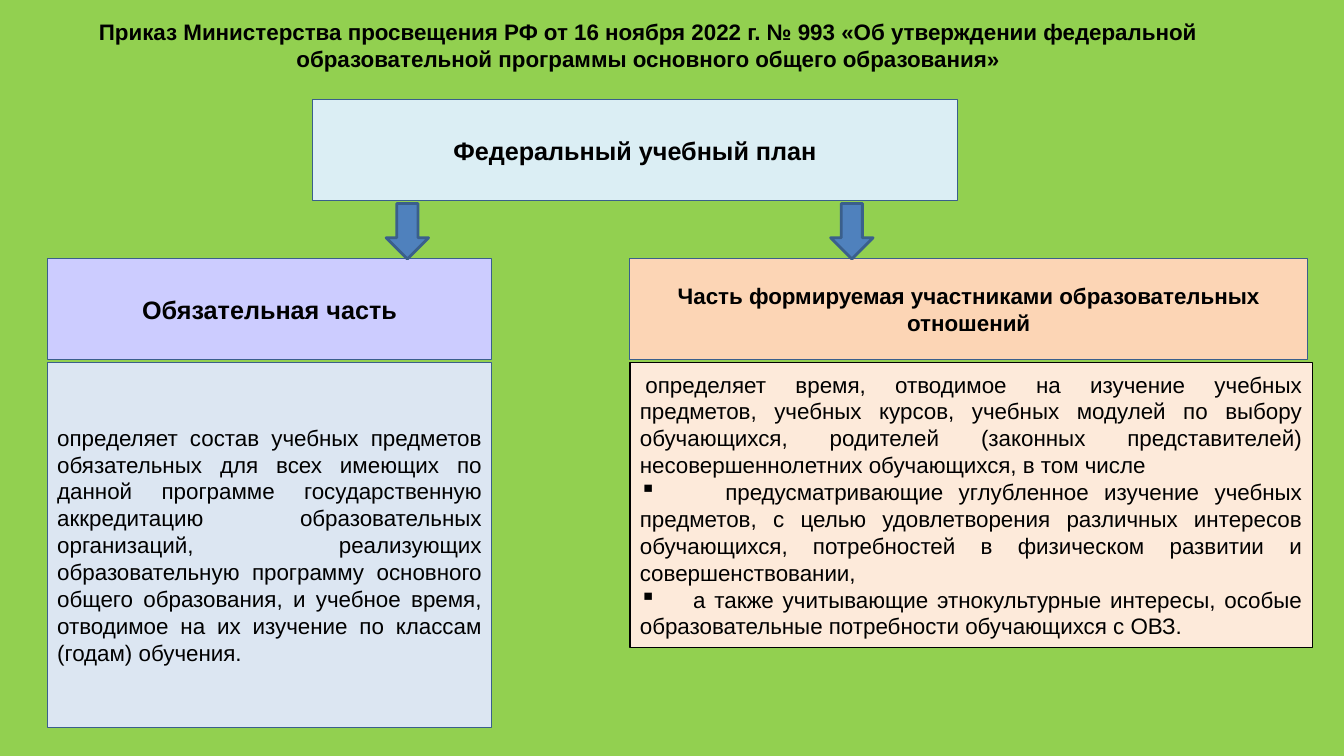
from lxml.etree import SubElement
from pptx import Presentation
from pptx.dml.color import RGBColor
from pptx.enum.shapes import MSO_SHAPE
from pptx.enum.text import MSO_ANCHOR, PP_ALIGN
from pptx.oxml.ns import qn
from pptx.util import Pt

# Content
TITLE = ("Приказ Министерства просвещения РФ от 16 ноября 2022 г. № 993 «Об утверждении "
         "федеральной образовательной программы основного общего образования»")
PLAN = "Федеральный учебный план"
REQUIRED = "Обязательная часть"
REQUIRED_TEXT = (
    "определяет состав учебных предметов обязательных для всех имеющих по данной программе "
    "государственную аккредитацию образовательных организаций, реализующих образовательную "
    "программу основного общего образования, и учебное время, отводимое на их изучение "
    "по классам (годам) обучения.")
FORMED = "Часть формируемая участниками образовательных отношений"
FORMED_TEXT = (
    "определяет время, отводимое на изучение учебных предметов, учебных курсов, учебных "
    "модулей по выбору обучающихся, родителей (законных представителей) "
    "несовершеннолетних обучающихся, в том числе")
FORMED_BULLETS = [  # text, distance of its first word from the margin
    ("предусматривающие углубленное изучение учебных предметов, с целью удовлетворения "
     "различных интересов обучающихся, потребностей в физическом развитии и "
     "совершенствовании,", 61),
    ("а также учитывающие этнокультурные интересы, особые образовательные потребности "
     "обучающихся с ОВЗ.", 38),
]

THEME = {
    "font": "Arial", "body": 16, "heading": 18,
    "background": "92D050", "text": "000000", "outline": "3A5F8C", "arrow": "4F81BD",
    "plan": "DBEEF4", "required": "CCCCFF", "required_text": "DCE6F2",
    "formed": "FCD5B5", "formed_text": "FDEADA",
}

# Layout in points
SLIDE_WIDTH, SLIDE_HEIGHT = 960, 540
PLAN_LEFT, PLAN_TOP, PLAN_WIDTH = 223.2, 71.4, 460.8
HEADING_HEIGHT = 72
HEADING_TOP = 185
TEXT_TOP = HEADING_TOP + HEADING_HEIGHT + 1.8
REQUIRED_LEFT, REQUIRED_WIDTH = 33.8, 317.5
FORMED_LEFT = 450
ARROW_WIDTH, ARROW_HEIGHT = 30.3, 39.6
ARROW_LEFTS = (275.8, 593.3)


def color(name):
    return RGBColor.from_string(THEME[name])


def add_block(kind, left, top, width, height, fill, line="outline", line_width=0.75):
    shape = slide.shapes.add_shape(kind, Pt(left), Pt(top), Pt(width), Pt(height))
    shape.shadow.inherit = False
    shape.fill.solid()
    shape.fill.fore_color.rgb = color(fill)
    shape.line.color.rgb = color(line)
    shape.line.width = Pt(line_width)
    return shape


def write(shape, paragraphs, size, align, bold=False, anchor=MSO_ANCHOR.MIDDLE):
    frame = shape.text_frame
    frame.word_wrap = True
    frame.vertical_anchor = anchor
    frame.text = "\n".join(paragraphs)
    for paragraph in frame.paragraphs:
        paragraph.alignment = align
        font = paragraph.font
        font.name, font.size, font.bold = THEME["font"], Pt(THEME[size]), bold
        font.color.rgb = color("text")
    return frame


def add_bullet(paragraph, tab):
    properties = paragraph._p.get_or_add_pPr()
    bullet = SubElement(properties, qn("a:buChar"), char="▪")
    tabs = SubElement(properties, qn("a:tabLst"))
    SubElement(tabs, qn("a:tab"), pos=str(Pt(tab)), algn="l")
    # Bullet and tab stops come before the default run properties
    defaults = properties.find(qn("a:defRPr"))
    if defaults is not None:
        defaults.addprevious(bullet)
        defaults.addprevious(tabs)


presentation = Presentation()
presentation.slide_width, presentation.slide_height = Pt(SLIDE_WIDTH), Pt(SLIDE_HEIGHT)
slide = presentation.slides.add_slide(presentation.slide_layouts[6])
slide.background.fill.solid()
slide.background.fill.fore_color.rgb = color("background")

# Title
title = slide.shapes.add_textbox(Pt(0), Pt(9.4), Pt(926), Pt(46))
write(title, [TITLE], "body", PP_ALIGN.CENTER, bold=True, anchor=MSO_ANCHOR.TOP)

# Plan and the headings of its two parts
for text, left, top, width, fill, size in [
    (PLAN, PLAN_LEFT, PLAN_TOP, PLAN_WIDTH, "plan", "heading"),
    (REQUIRED, REQUIRED_LEFT, HEADING_TOP, REQUIRED_WIDTH, "required", "heading"),
    (FORMED, FORMED_LEFT, HEADING_TOP, 484, "formed", "body"),
]:
    heading = add_block(MSO_SHAPE.RECTANGLE, left, top, width, HEADING_HEIGHT, fill)
    write(heading, [text], size, PP_ALIGN.CENTER, bold=True)

# Arrows from the plan to the parts
for left in ARROW_LEFTS:
    add_block(MSO_SHAPE.DOWN_ARROW, left, HEADING_TOP - ARROW_HEIGHT,
              ARROW_WIDTH, ARROW_HEIGHT, "arrow", line_width=2)

# Description of the required part
required = add_block(MSO_SHAPE.RECTANGLE, REQUIRED_LEFT, TEXT_TOP, REQUIRED_WIDTH, 260.6,
                     "required_text")
write(required, [REQUIRED_TEXT], "body", PP_ALIGN.JUSTIFY)

# Description of the formed part
formed = add_block(MSO_SHAPE.RECTANGLE, FORMED_LEFT, TEXT_TOP, 487.4, 203.8,
                   "formed_text", "text", 1)
frame = write(formed, [FORMED_TEXT] + ["\t" + text for text, _ in FORMED_BULLETS],
              "body", PP_ALIGN.JUSTIFY, anchor=MSO_ANCHOR.TOP)
frame.margin_top = Pt(6)
frame.paragraphs[0]._p.get_or_add_pPr().set("indent", str(Pt(4)))
for paragraph, (_, tab) in zip(frame.paragraphs[1:], FORMED_BULLETS):
    add_bullet(paragraph, tab)

presentation.save("out.pptx")
